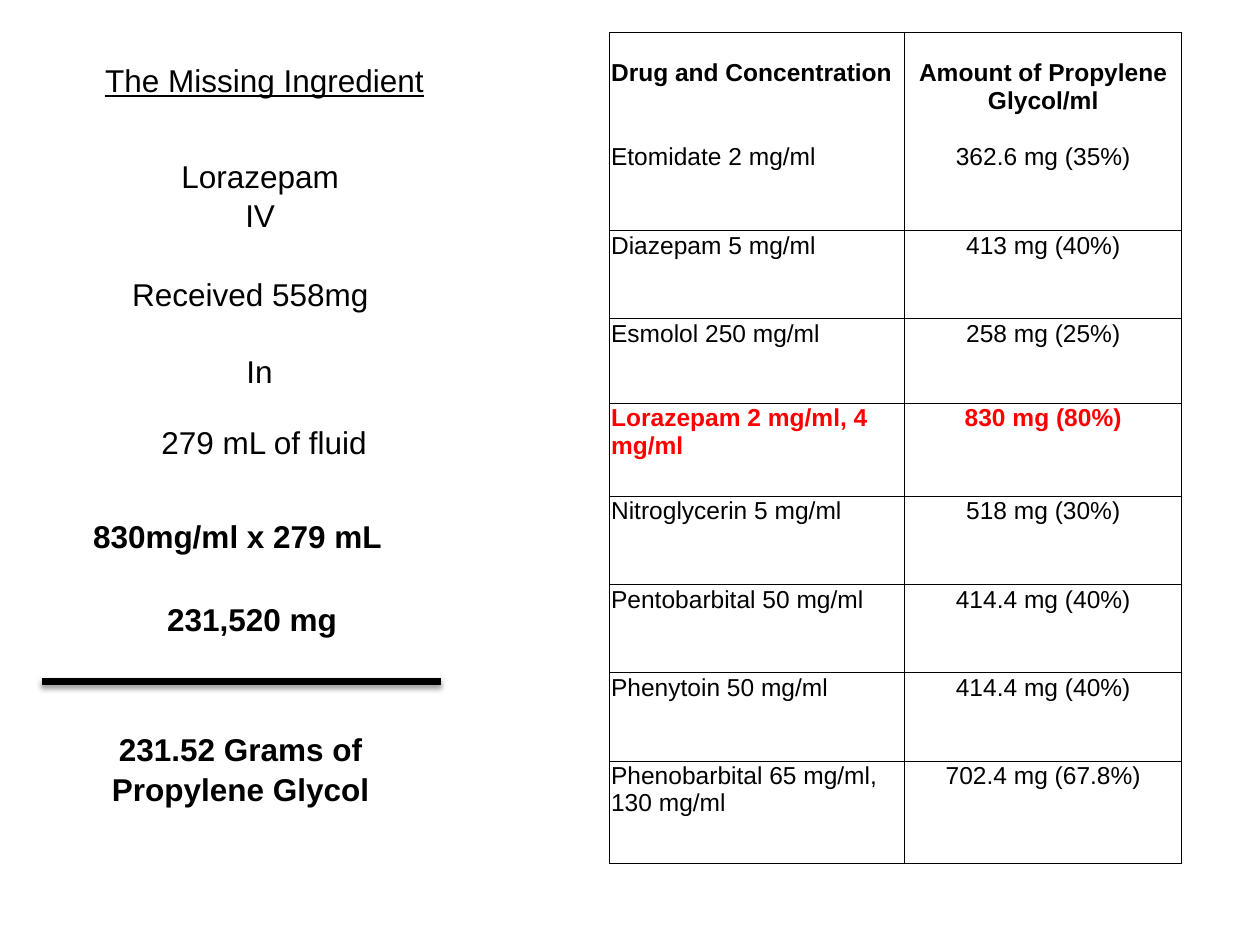
"""Build a slide on the propylene glycol load of intravenous lorazepam."""
from dataclasses import dataclass

from lxml import etree
from pptx import Presentation
from pptx.dml.color import RGBColor
from pptx.enum.shapes import MSO_CONNECTOR
from pptx.enum.text import MSO_ANCHOR, PP_ALIGN
from pptx.oxml import parse_xml
from pptx.oxml.ns import nsdecls, qn
from pptx.util import Inches, Pt

LEFT, MID = PP_ALIGN.LEFT, PP_ALIGN.CENTER
TOP, BASE = MSO_ANCHOR.TOP, MSO_ANCHOR.BOTTOM
BLACK = RGBColor(0x00, 0x00, 0x00)
RED = RGBColor(0xFF, 0x00, 0x00)
UNIT = Inches(0.1)
COLS, ROWS = 100, 75
INSET = Inches(0.01)
NOTE = {"name": "Arial", "size": Pt(18)}
BODY = {"name": "Arial", "size": Pt(14)}


@dataclass
class Label:
    text: str
    col: float
    row: float
    wide: float
    high: float = 4
    align: PP_ALIGN = MID
    bold: bool = False


@dataclass
class Drug:
    name: str
    dose: str
    high: float
    color: RGBColor = BLACK
    bold: bool = False


HEAD = Label("The Missing Ingredient", 7.1, 4.2, 27.8)
LABELS = [
    Label("Lorazepam IV", 12.3, 11.8, 16.7, 7.1),
    Label("Received 558mg", 9.5, 21.2, 21.2, align=LEFT),
    Label("In", 17.2, 27.3, 6.8),
    Label("279 mL of fluid", 11.2, 32.9, 19.5),
    Label("830mg/ml x 279 mL", 6.4, 40.4, 28.4, align=LEFT, bold=True),
    Label("231,520 mg", 11.2, 47, 17.6, bold=True),
    Label("231.52 Grams of Propylene Glycol", 3.3, 57.3, 31.6, 7.1, bold=True),
]
DRUGS = [
    Drug("Drug and Concentration", "Amount of Propylene Glycol/ml", 8.7, bold=True),
    Drug("Etomidate 2 mg/ml", "362.6 mg (35%)", 7),
    Drug("Diazepam 5 mg/ml", "413 mg (40%)", 7),
    Drug("Esmolol 250 mg/ml", "258 mg (25%)", 6.7),
    Drug("Lorazepam 2 mg/ml, 4 mg/ml", "830 mg (80%)", 7.4, RED, True),
    Drug("Nitroglycerin 5 mg/ml", "518 mg (30%)", 7),
    Drug("Pentobarbital 50 mg/ml", "414.4 mg (40%)", 7),
    Drug("Phenytoin 50 mg/ml", "414.4 mg (40%)", 7),
    Drug("Phenobarbital 65 mg/ml, 130 mg/ml", "702.4 mg (67.8%)", 8.1),
]
WIDTHS = (23.4, 22)
FEET = (Inches(0.44), Inches(0.22))


def grid(*steps: float) -> list[int]:
    """Turn grid steps into lengths."""
    return [round(step * UNIT) for step in steps]


def apply(item, values: dict) -> None:
    """Set each named value on an item."""
    for key, value in values.items():
        setattr(item, key, value)


def write(frame, text: str, align: PP_ALIGN, form: dict, color: RGBColor = BLACK) -> None:
    """Put one formatted paragraph in a text frame."""
    para = frame.paragraphs[0]
    para.alignment = align
    run = para.add_run()
    run.text = text
    apply(run.font, form)
    run.font.color.rgb = color


def place(shape, label: Label, **extra) -> None:
    """Move a text shape to its spot and fill in its label."""
    spot = grid(label.col, label.row, label.wide, label.high)
    apply(shape, dict(zip(("left", "top", "width", "height"), spot)))
    frame = shape.text_frame
    apply(frame, {"word_wrap": True, "vertical_anchor": TOP})
    write(frame, label.text, label.align, {**NOTE, "bold": label.bold, **extra})
    frame.paragraphs[0].line_spacing = 1.05


def edge(cell, sides: str) -> None:
    """Rule the given sides of a cell and clear the others."""
    props = cell._tc.get_or_add_tcPr()
    for side in "LRTB":
        line = etree.SubElement(props, qn(f"a:ln{side}"), w=str(Pt(0.5)))
        if side in sides:
            fill = etree.SubElement(line, qn("a:solidFill"))
            etree.SubElement(fill, qn("a:srgbClr"), val=str(BLACK))
        else:
            etree.SubElement(line, qn("a:noFill"))


def chart_drugs(slide) -> None:
    """Draw the table of drugs and solvent amounts."""
    high = sum(drug.high for drug in DRUGS)
    spot = grid(48.4, 2.6, sum(WIDTHS), high)
    table = slide.shapes.add_table(len(DRUGS), len(WIDTHS), *spot).table
    apply(table, {"first_row": False, "horz_banding": False})
    for col, wide in zip(table.columns, grid(*WIDTHS)):
        col.width = wide
    for index, drug in enumerate(DRUGS):
        table.rows[index].height = grid(drug.high)[0]
        sides = {0: "LRT", 1: "LRB"}.get(index, "LRTB")
        form = {**BODY, "bold": drug.bold}
        for col, (text, align) in enumerate(((drug.name, LEFT), (drug.dose, MID))):
            cell = table.cell(index, col)
            apply(cell, {
                "margin_left": INSET, "margin_right": INSET, "margin_top": INSET,
                "margin_bottom": 0 if index else FEET[col],
                "vertical_anchor": TOP if index else BASE,
            })
            edge(cell, sides)
            cell.fill.background()
            write(cell.text_frame, text, align, form, drug.color)


def rule(slide) -> None:
    """Draw the heavy sum line with its soft shadow."""
    line = slide.shapes.add_connector(MSO_CONNECTOR.STRAIGHT, *grid(3.3, 54.1, 35, 54.1))
    line.line.width = Pt(4)
    line.line.color.rgb = BLACK
    line._element.spPr.append(parse_xml(
        f'<a:effectLst {nsdecls("a")}><a:outerShdw blurRad="{Pt(3.1)}" '
        f'dist="{Pt(1.6)}" dir="5400000" rotWithShape="0"><a:srgbClr val="{BLACK}">'
        '<a:alpha val="38000"/></a:srgbClr></a:outerShdw></a:effectLst>'))


def main() -> None:
    """Build and save the slide."""
    deck = Presentation()
    deck.slide_width, deck.slide_height = grid(COLS, ROWS)
    slide = deck.slides.add_slide(deck.slide_layouts[5])
    chart_drugs(slide)
    place(slide.shapes.title, HEAD, underline=True)
    for label in LABELS:
        place(slide.shapes.add_textbox(0, 0, 0, 0), label)
    rule(slide)
    deck.save("out.pptx")


if __name__ == "__main__":
    main()
